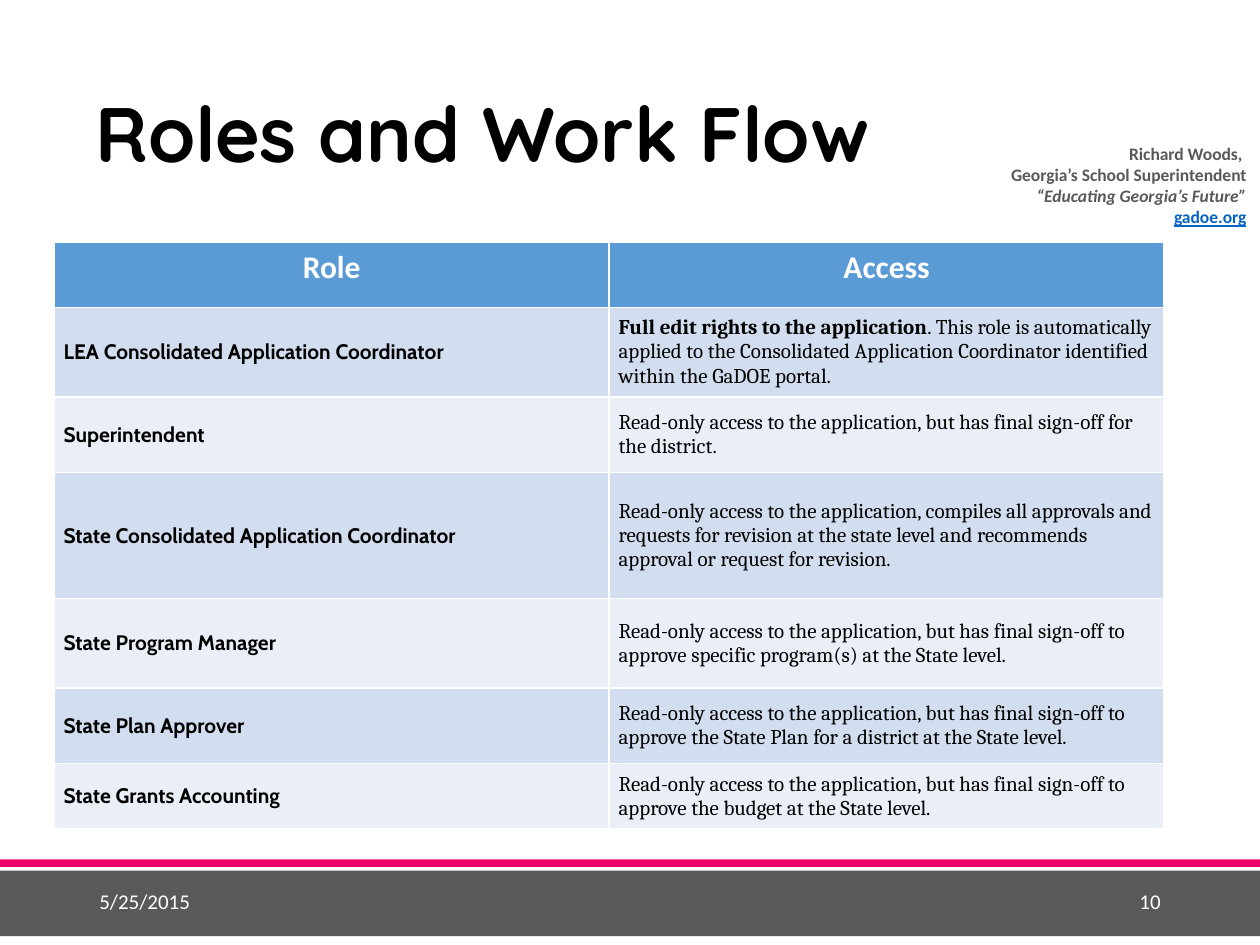
from typing import NamedTuple

import pptx
import pptx.dml.color
import pptx.enum.shapes
import pptx.enum.text
import pptx.oxml
import pptx.oxml.ns
import pptx.util

RGBColor = pptx.dml.color.RGBColor
PP_ALIGN = pptx.enum.text.PP_ALIGN
MIDDLE = pptx.enum.text.MSO_ANCHOR.MIDDLE

WHITE = RGBColor(0xFF, 0xFF, 0xFF)
BLACK = RGBColor(0, 0, 0)
GRAY = RGBColor(0x59, 0x59, 0x59)
PINK = RGBColor(0xEC, 0x02, 0x69)
LINK = RGBColor(0x05, 0x63, 0xC1)
HEADER = RGBColor(0x5B, 0x9B, 0xD5)
BANDS = (RGBColor(0xD2, 0xDE, 0xEF), RGBColor(0xEA, 0xEF, 0xF7))

# The slide is a grid of 100 columns by 75 rows of square units
UNIT = pptx.util.Inches(0.1)
COLS, ROWS = 100, 75


class Box(NamedTuple):
    col: float
    row: float
    cols: float
    rows: float


class Style(NamedTuple):
    font: str
    size: float
    color: RGBColor
    bold: bool = False
    italic: bool = False
    underline: bool = False


class Span(NamedTuple):
    text: str
    style: Style


class Role(NamedTuple):
    name: str
    access: tuple[Span, ...]
    rows: float
    pad: float = 0  # space above and below the access text


TITLE = Style("Quicksand", 44, BLACK, bold=True)
CONTACT = Style("Calibri", 10, GRAY, bold=True)
FOOTER = Style("Calibri", 12, WHITE)
HEAD = Style("Calibri", 18, WHITE, bold=True)
NAME = Style("Cabin", 12, BLACK, bold=True)
ACCESS = Style("Cambria", 12, BLACK)

READ_ONLY = "Read-only access to the application, "
SIGN_OFF = READ_ONLY + "but has final sign-off "
ROLES = (
    Role("LEA Consolidated Application Coordinator",
         (Span("Full edit rights to the application", ACCESS._replace(bold=True)),
          Span(". This role is automatically applied to the Consolidated Application "
               "Coordinator identified within the GaDOE portal.", ACCESS)), 7.1),
    Role("Superintendent", (Span(SIGN_OFF + "for the district.", ACCESS),), 5.9, 1),
    Role("State Consolidated Application Coordinator",
         (Span(READ_ONLY + "compiles all approvals and requests for revision at the state "
               "level and recommends approval or request for revision.", ACCESS),), 9.9, 2),
    Role("State Program Manager",
         (Span(SIGN_OFF + "to approve specific program(s) at the State level.", ACCESS),), 7.1),
    Role("State Plan Approver",
         (Span(SIGN_OFF + "to approve the State Plan for a district at the State level.",
               ACCESS),), 6),
    Role("State Grants Accounting",
         (Span(SIGN_OFF + "to approve the budget at the State level.", ACCESS),), 5.2),
)


def units(n: float) -> int:
    return round(n * UNIT)


def write(p, spans, align=PP_ALIGN.LEFT) -> None:
    p.alignment = align
    for span in spans:
        r = p.add_run()
        r.text = span.text
        f, style = r.font, span.style
        f.name, f.size = style.font, pptx.util.Pt(style.size)
        f.bold, f.italic, f.underline = style.bold, style.italic, style.underline
        f.color.rgb = style.color


def add_text(slide, box: Box, lines, align=PP_ALIGN.LEFT):
    tf = slide.shapes.add_textbox(*map(units, box)).text_frame
    tf.word_wrap = True
    tf.vertical_anchor = MIDDLE
    for i, line in enumerate(lines):
        write(tf.add_paragraph() if i else tf.paragraphs[0], [line], align)
    return tf


def add_bar(slide, box: Box, color: RGBColor) -> None:
    sp = slide.shapes.add_shape(pptx.enum.shapes.MSO_SHAPE.RECTANGLE, *map(units, box))
    sp.shadow.inherit = False
    sp.fill.solid()
    sp.fill.fore_color.rgb = color
    sp.line.fill.background()


def style_cell(cell, fill: RGBColor, pad_x: float, pad_y: float) -> None:
    cell.margin_left = cell.margin_right = units(pad_x)
    cell.margin_top = cell.margin_bottom = units(pad_y)
    for side in "LRTB":
        cell._tc.get_or_add_tcPr().append(pptx.oxml.parse_xml(
            f'<a:ln{side} {pptx.oxml.ns.nsdecls("a")} w="{pptx.util.Pt(1)}">'
            f'<a:solidFill><a:srgbClr val="{WHITE}"/></a:solidFill></a:ln{side}>'))
    cell.fill.solid()
    cell.fill.fore_color.rgb = fill


def add_roles_table(slide, box: Box) -> None:
    table = slide.shapes.add_table(len(ROLES) + 1, 2, *map(units, box)).table
    for column in table.columns:
        column.width = units(box.cols / 2)

    # Header
    table.rows[0].height = units(5.2)
    for cell, label in zip(table.rows[0].cells, ("Role", "Access")):
        style_cell(cell, HEADER, 1, 0.5)
        write(cell.text_frame.paragraphs[0], [Span(label, HEAD)], PP_ALIGN.CENTER)

    # One banded row per role
    for i, role in enumerate(ROLES):
        row = table.rows[i + 1]
        row.height = units(role.rows)
        contents = (((Span(role.name, NAME),), 0), (role.access, role.pad))
        for cell, (spans, pad) in zip(row.cells, contents):
            style_cell(cell, BANDS[i % 2], 0.75, pad)
            cell.vertical_anchor = MIDDLE
            write(cell.text_frame.paragraphs[0], spans)


def main() -> None:
    prs = pptx.Presentation()
    prs.slide_width, prs.slide_height = units(COLS), units(ROWS)
    slide = prs.slides.add_slide(prs.slide_layouts[6])

    # Footer bars
    add_bar(slide, Box(0, 69.1, COLS, 5.2), GRAY)
    add_bar(slide, Box(0, 68.2, COLS, 0.6), PINK)

    # Contact block
    add_text(slide, Box(78.8, 11.2, 21.1, 7), (
        Span("Richard Woods, ", CONTACT),
        Span("Georgia’s School Superintendent", CONTACT),
        Span("“Educating Georgia’s Future”", CONTACT._replace(italic=True)),
        Span("gadoe.org", CONTACT._replace(color=LINK, underline=True)),
    ), PP_ALIGN.RIGHT)

    # Title
    tf = add_text(slide, Box(6.6, 3.7, 69.1, 14.5), [Span("Roles and Work Flow", TITLE)])
    tf.paragraphs[0].line_spacing = 0.9

    # Date and slide number
    add_text(slide, Box(6.9, 69.5, 22.5, 4), [Span("5/25/2015", FOOTER)])
    add_text(slide, Box(70.6, 69.5, 22.5, 4), [Span("10", FOOTER)], PP_ALIGN.RIGHT)

    add_roles_table(slide, Box(4.3, 19.2, 88.1, 46.4))
    prs.save("out.pptx")


if __name__ == "__main__":
    main()
